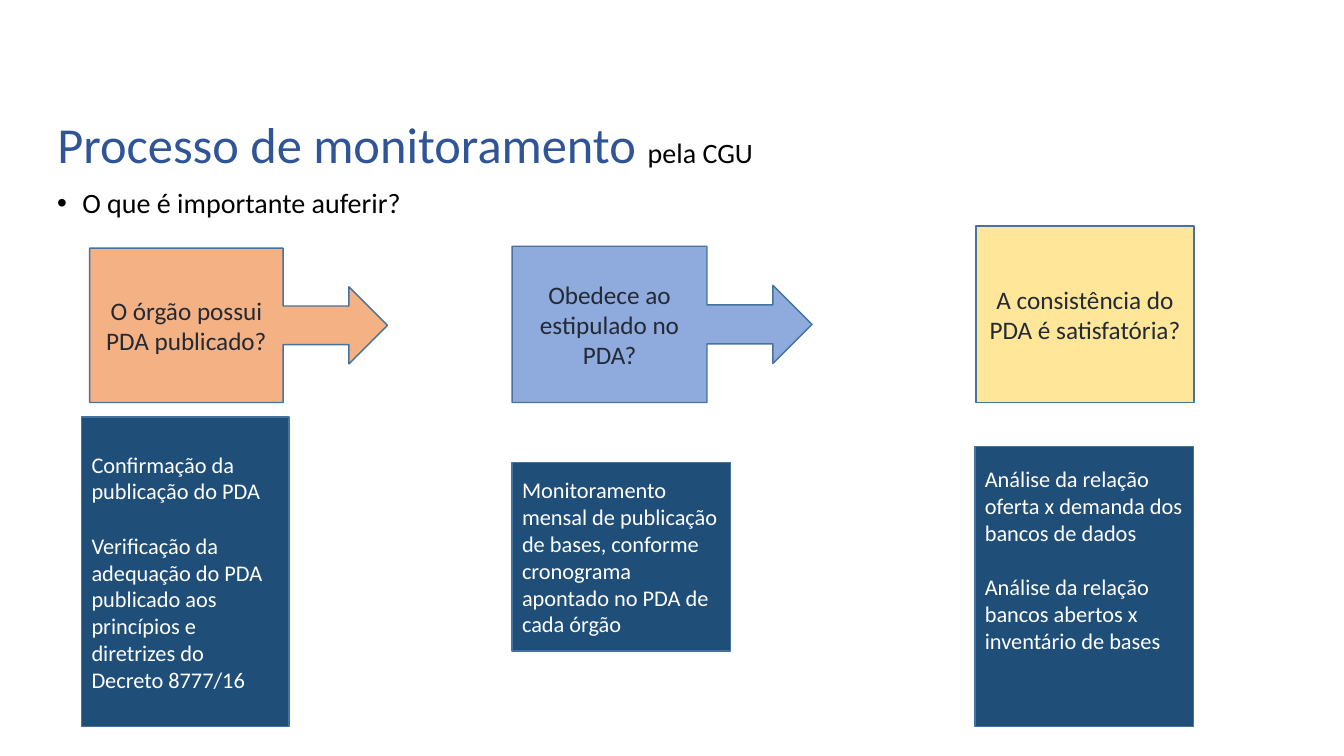
import pptx
import pptx.util
import pptx.dml.color
import pptx.enum.shapes
import pptx.enum.text
import pptx.oxml

Pt = pptx.util.Pt
RGB = pptx.dml.color.RGBColor.from_string
SHAPE = pptx.enum.shapes.MSO_SHAPE
ALIGN = pptx.enum.text.PP_ALIGN
ANCHOR = pptx.enum.text.MSO_ANCHOR

THEME = {
    "font": "Calibri",
    "title": {"size": 36, "color": "2F5597"},
    "lead": {"size": 20, "color": "000000"},
    "question": {"size": 18, "color": "222A35"},
    "detail": {"size": 16, "color": "FFFFFF"},
    "orange": "F4B183",
    "blue": "8FAADC",
    "yellow": "FFE699",
    "navy": "1F4E79",
    "line": "43739E",
}


def add_run(p, text, style):
    r = p.add_run()
    r.text = text
    values = {"name": THEME["font"], "size": Pt(THEME[style]["size"])}
    for key, value in values.items():
        setattr(r.font, key, value)
    r.font.color.rgb = RGB(THEME[style]["color"])


def add_box(s, kind, bounds, fill, paragraphs, style, align, bottom=3.6):
    sp = s.shapes.add_shape(kind, *map(Pt, bounds))
    sp.shadow.inherit = False
    sp.fill.solid()
    sp.fill.fore_color.rgb = RGB(THEME[fill])
    sp.line.color.rgb = RGB(THEME["line"])
    sp.line.width = Pt(1)
    tf = sp.text_frame
    frame = {"word_wrap": True, "vertical_anchor": ANCHOR.MIDDLE, "margin_bottom": Pt(bottom)}
    for key, value in frame.items():
        setattr(tf, key, value)
    for i, text in enumerate(paragraphs):
        p = tf.add_paragraph() if i else tf.paragraphs[0]
        p.alignment = align
        if i:
            p.space_before = Pt(19.5)
        add_run(p, text, style)


prs = pptx.Presentation()
prs.slide_width, prs.slide_height = Pt(960), Pt(540)
s = prs.slides.add_slide(prs.slide_layouts[5])

title = s.shapes.title
lead = s.shapes.add_textbox(Pt(33.8), Pt(131.6), Pt(828), Pt(46.2))
bounds = {"left": Pt(33.8), "top": Pt(82), "width": Pt(828), "height": Pt(47)}
for key, value in bounds.items():
    setattr(title, key, value)
for sp in (title, lead):
    sp.text_frame.word_wrap = True
    sp.text_frame.vertical_anchor = ANCHOR.TOP
    p = sp.text_frame.paragraphs[0]
    p.alignment = ALIGN.LEFT
    p.line_spacing = 0.9

p = title.text_frame.paragraphs[0]
add_run(p, "Processo de monitoramento ", "title")
add_run(p, "pela CGU", "lead")

p = lead.text_frame.paragraphs[0]
pPr = p._p.get_or_add_pPr()
pPr.set("marL", str(Pt(18)))
pPr.set("indent", str(-Pt(18)))
ns = "http://schemas.openxmlformats.org/drawingml/2006/main"
for tag, attr, value in (("buFont", "typeface", "Arial"), ("buChar", "char", "•")):
    pPr.append(pptx.oxml.parse_xml(f'<a:{tag} xmlns:a="{ns}" {attr}="{value}"/>'))
add_run(p, "O que é importante auferir?", "lead")

questions = [
    (SHAPE.RIGHT_ARROW_CALLOUT, (64.1, 177.3, 212.7, 110.2), "orange",
     "O órgão possui PDA publicado?"),
    (SHAPE.RIGHT_ARROW_CALLOUT, (365.8, 175.9, 214.2, 111.6), "blue",
     "Obedece ao estipulado no PDA?"),
    (SHAPE.RECTANGLE, (697, 161.5, 156, 126), "yellow",
     "A consistência do PDA é satisfatória?"),
]
for kind, bounds, fill, text in questions:
    add_box(s, kind, bounds, fill, [text], "question", ALIGN.CENTER)

details = [
    ((58.3, 298, 148.2, 221), 3.6,
     ["Confirmação da publicação do PDA",
      "Verificação da adequação do PDA publicado aos princípios e diretrizes do Decreto 8777/16"]),
    ((365.8, 330.5, 156.2, 134.5), 3.6,
     ["Monitoramento mensal de publicação de bases, conforme cronograma apontado no PDA de cada órgão"]),
    ((696.4, 319, 156.2, 200), 42.6,
     ["Análise da relação oferta x demanda dos bancos de dados",
      "Análise da relação bancos abertos x inventário de bases"]),
]
for bounds, bottom, paragraphs in details:
    add_box(s, SHAPE.RECTANGLE, bounds, "navy", paragraphs, "detail", ALIGN.LEFT, bottom)

prs.save("out.pptx")
